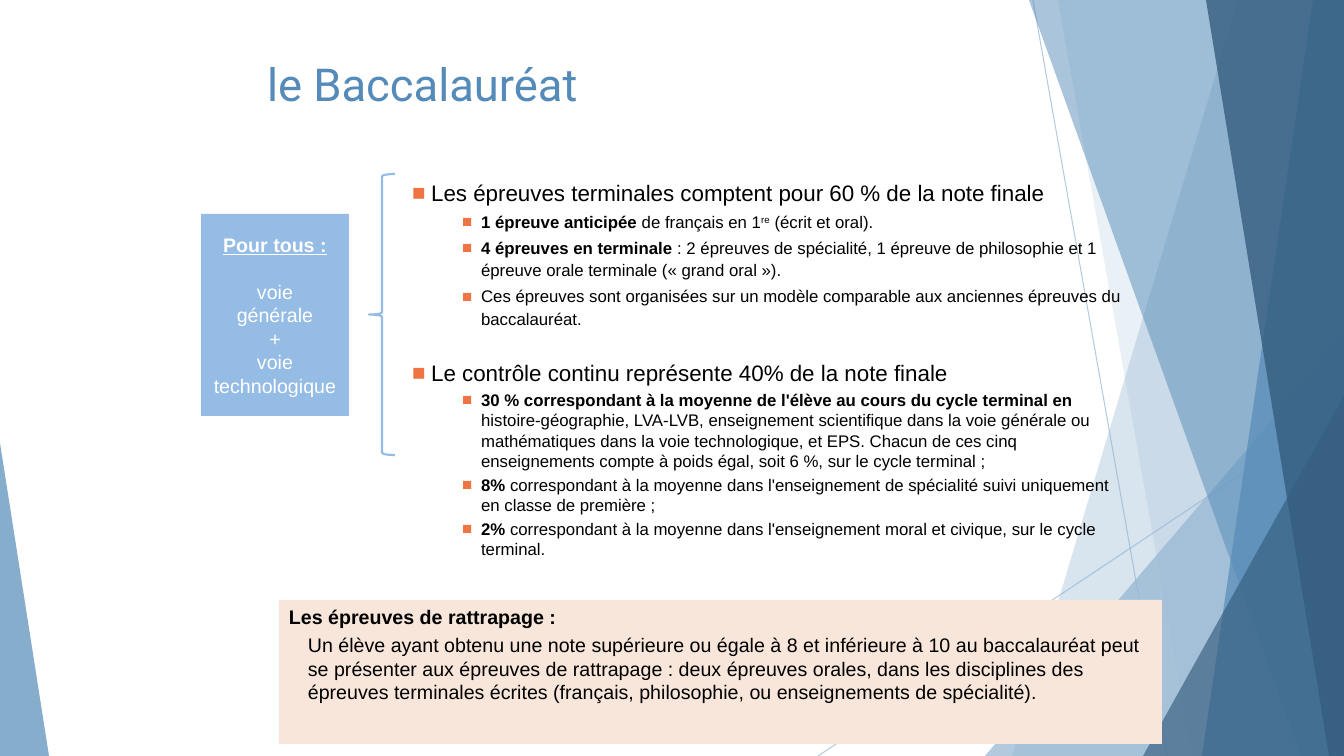
"""Build the slide on how the baccalauréat is assessed."""
from dataclasses import dataclass

from lxml import etree
from pptx import Presentation
from pptx.dml.color import RGBColor
from pptx.enum.shapes import MSO_CONNECTOR, MSO_SHAPE
from pptx.enum.text import MSO_ANCHOR, MSO_AUTO_SIZE, PP_ALIGN
from pptx.oxml.ns import qn
from pptx.util import Pt

RECTANGLE, BRACE = MSO_SHAPE.RECTANGLE, MSO_SHAPE.LEFT_BRACE
TRIANGLE, STRAIGHT = MSO_SHAPE.ISOSCELES_TRIANGLE, MSO_CONNECTOR.STRAIGHT
LEFT, CENTER = PP_ALIGN.LEFT, PP_ALIGN.CENTER
TOP, MIDDLE = MSO_ANCHOR.TOP, MSO_ANCHOR.MIDDLE
FIXED = MSO_AUTO_SIZE.NONE
BOLD, UNDERLINE, SUPER = "bold", "underline", "super"


@dataclass(frozen=True)
class Theme:
    pale: str = "94B6D2"
    mid: str = "558BB8"
    deep: str = "355D7E"
    label: str = "95BCE5"
    note: str = "F8E6DA"
    bullet: str = "EE7444"
    black: str = "000000"
    white: str = "FFFFFF"
    font: str = "Arial"
    title_font: str = "Roboto"
    title: float = 32.4
    heading: int = 16
    callout: int = 14
    detail: int = 12


THEME = Theme()
WIDTH, HEIGHT = 1344, 756
EMU_PER_PX = 12192000 / WIDTH

TITLE = "le Baccalauréat"
AUDIENCE_HEADING = "Pour tous :"
AUDIENCE = ["voie", "générale", "+", "voie technologique"]
SECTIONS = [
    {
        "heading": "Les épreuves terminales comptent pour 60 % de la note finale",
        "before": 0,
        "line_spacing": 1.1,
        "details": [
            [("1 épreuve anticipée ", BOLD), ("de français en 1", ""),
             ("re", SUPER), (" (écrit et oral).", "")],
            [("4 épreuves en terminale", BOLD),
             (" : 2 épreuves de spécialité, 1 épreuve de philosophie et 1 "
              "épreuve orale terminale (« grand oral »).", "")],
            [("Ces épreuves sont organisées sur un modèle comparable aux "
              "anciennes épreuves du baccalauréat.", "")],
        ],
    },
    {
        "heading": "Le contrôle continu représente 40% de la note finale",
        "before": 22,
        "line_spacing": 1.0,
        "details": [
            [("30 % correspondant à la moyenne de l'élève au cours du cycle "
              "terminal en ", BOLD),
             ("histoire-géographie, LVA-LVB, enseignement scientifique dans la "
              "voie générale ou mathématiques dans la voie technologique, et "
              "EPS. Chacun de ces cinq enseignements compte à poids égal, soit "
              "6 %, sur le cycle terminal ;", "")],
            [("8%", BOLD),
             (" correspondant à la moyenne dans l'enseignement de spécialité "
              "suivi uniquement en classe de première ;", "")],
            [("2%", BOLD),
             (" correspondant à la moyenne dans l'enseignement moral et "
              "civique, sur le cycle terminal.", "")],
        ],
    },
]
RESIT_HEADING = "Les épreuves de rattrapage :"
RESIT = ("Un élève ayant obtenu une note supérieure ou égale à 8 et inférieure "
         "à 10 au baccalauréat peut se présenter aux épreuves de rattrapage : "
         "deux épreuves orales, dans les disciplines des épreuves terminales "
         "écrites (français, philosophie, ou enseignements de spécialité).")

RAYS = [(1033, 0, 1167, HEIGHT), (WIDTH, 406, 818, HEIGHT)]
BACK_BANDS = [(1238, 1012, THEME.pale, 36), (1058, 1192, THEME.pale, 20)]
FRONT_BANDS = [(1029, 1301, THEME.mid, 50), (1313, 1202, THEME.mid, 70),
               (1206, 1329, THEME.deep, 80)]
BACK_CORNERS = [(985, 336, WIDTH, 1, THEME.pale, 72)]
FRONT_CORNERS = [(1143, 396, WIDTH, 1, THEME.deep, 66),
                 (0, 443, 49, 0, THEME.mid, 70)]


def px(*lengths):
    return [round(length * EMU_PER_PX) for length in lengths]


def set_alpha(color_format, percent):
    color = color_format._xFill.find(qn("a:srgbClr"))
    etree.SubElement(color, qn("a:alpha")).set("val", str(percent * 1000))


def paint(shape, color, alpha=100):
    shape.shadow.inherit = False
    shape.line.fill.background()
    shape.fill.solid()
    shape.fill.fore_color.rgb = RGBColor.from_string(color)
    if alpha < 100:
        set_alpha(shape.fill.fore_color, alpha)


def add_rays(shapes):
    for ray in RAYS:
        line = shapes.add_connector(STRAIGHT, *px(*ray))
        line.line.width = Pt(0.75)
        line.line.color.rgb = RGBColor.from_string(THEME.pale)
        set_alpha(line.line.fill.fore_color, 70)
        etree.SubElement(line._element.spPr, qn("a:effectLst"))


def add_bands(shapes, bands):
    for top_x, bottom_x, color, alpha in bands:
        outline = shapes.build_freeform(top_x, 0, scale=EMU_PER_PX)
        outline.add_line_segments(
            [(WIDTH, 0), (WIDTH, HEIGHT), (bottom_x, HEIGHT)], close=True)
        paint(outline.convert_to_shape(), color, alpha)


def add_corners(shapes, corners):
    for left, top, right, apex, color, alpha in corners:
        corner = shapes.add_shape(
            TRIANGLE, *px(left, top, right - left, HEIGHT - top))
        corner.adjustments[0] = apex
        paint(corner, color, alpha)


def write(frame, runs, *, size, color=THEME.black, font=THEME.font, align=LEFT,
          before=0, spacing=1.0, level=0, indent=0, hanging=0, first=False):
    paragraph = frame.paragraphs[0] if first else frame.add_paragraph()
    paragraph.alignment, paragraph.level = align, level
    paragraph.space_before, paragraph.space_after = Pt(before), Pt(0)
    paragraph.line_spacing = spacing
    properties = paragraph._p.get_or_add_pPr()
    margin, first_line = px(indent, -hanging)
    properties.set("marL", str(margin))
    properties.set("indent", str(first_line))
    if hanging:
        tint = etree.SubElement(properties, qn("a:buClr"))
        etree.SubElement(tint, qn("a:srgbClr")).set("val", THEME.bullet)
        etree.SubElement(properties, qn("a:buFont")).set("typeface", THEME.font)
        etree.SubElement(properties, qn("a:buChar")).set("char", "■")
    for text, style in runs:
        run = paragraph.add_run()
        run.text = text
        run.font.name, run.font.size = font, Pt(size)
        run.font.color.rgb = RGBColor.from_string(color)
        run.font.bold = BOLD in style
        run.font.underline = UNDERLINE in style
        if SUPER in style:
            run._r.get_or_add_rPr().set("baseline", "30000")


def place(shape, box, anchor=TOP):
    shape.left, shape.top, shape.width, shape.height = px(*box)
    frame = shape.text_frame
    frame.word_wrap, frame.auto_size = True, FIXED
    frame.vertical_anchor = anchor
    return frame


def add_panel(shapes, box, color, anchor):
    panel = shapes.add_shape(RECTANGLE, *px(*box))
    paint(panel, color)
    return place(panel, box, anchor)


def main():
    deck = Presentation()
    deck.slide_width, deck.slide_height = px(WIDTH, HEIGHT)
    slide = deck.slides.add_slide(deck.slide_layouts[1])
    shapes = slide.shapes
    title, body = shapes.title, slide.placeholders[1]

    add_rays(shapes)
    add_bands(shapes, BACK_BANDS)
    add_corners(shapes, BACK_CORNERS)
    add_bands(shapes, FRONT_BANDS)
    add_corners(shapes, FRONT_CORNERS)

    shapes._spTree.append(title._element)
    write(place(title, (257, 51, 869, 63)), [(TITLE, "")], size=THEME.title,
          color=THEME.mid, font=THEME.title_font, first=True)

    audience = add_panel(shapes, (201, 214, 148, 202), THEME.label, MIDDLE)
    label = {"size": THEME.callout, "color": THEME.white, "align": CENTER}
    write(audience, [(AUDIENCE_HEADING, BOLD + UNDERLINE)], first=True, **label)
    for index, text in enumerate(AUDIENCE):
        write(audience, [(text, "")], before=0 if index else 16.8, **label)

    brace = shapes.add_shape(BRACE, *px(369, 174, 26, 281))
    brace.shadow.inherit = False
    brace.fill.background()
    brace.line.color.rgb = RGBColor.from_string(THEME.label)
    brace.line.width = Pt(1.5)

    shapes._spTree.append(body._element)
    rules = place(body, (402, 174, 738, 445))
    for index, section in enumerate(SECTIONS):
        write(rules, [(section["heading"], "")], size=THEME.heading, indent=19,
              hanging=19, before=section["before"], first=index == 0)
        for detail in section["details"]:
            write(rules, detail, size=THEME.detail, level=1, indent=69,
                  hanging=19, before=2.8, spacing=section["line_spacing"])

    resit = add_panel(shapes, (279, 600, 883, 144), THEME.note, TOP)
    write(resit, [(RESIT_HEADING, BOLD)], size=THEME.callout, first=True)
    write(resit, [(RESIT, "")], size=THEME.callout, level=1, indent=19,
          before=3.2)
    deck.save("out.pptx")


if __name__ == "__main__":
    main()
